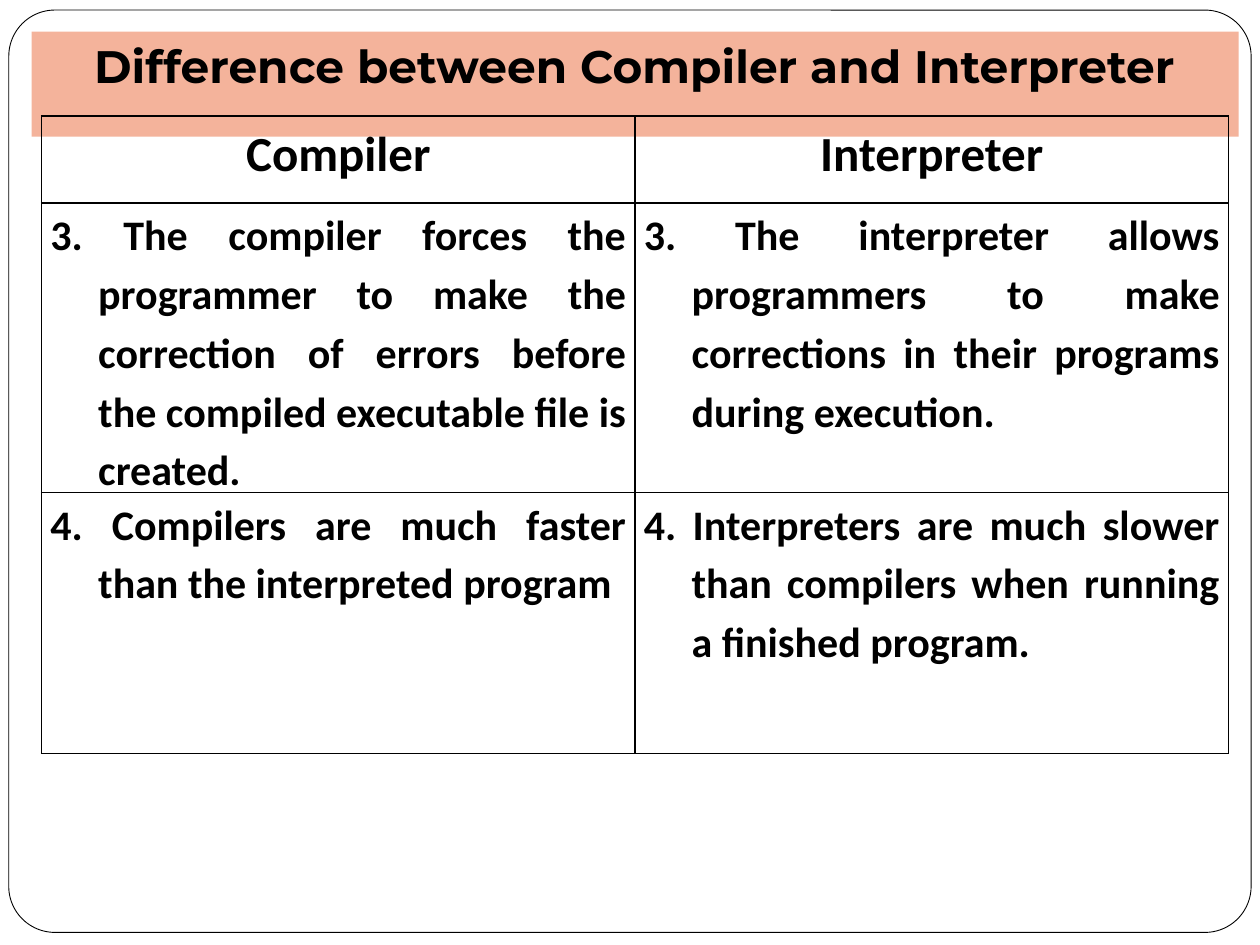
from pptx import Presentation
from pptx.dml.color import RGBColor
from pptx.enum.shapes import MSO_SHAPE
from pptx.enum.text import MSO_ANCHOR, MSO_AUTO_SIZE, PP_ALIGN
from pptx.oxml import parse_xml
from pptx.oxml.ns import nsdecls
from pptx.util import Inches, Pt

COLORS = {"ink": "000000", "paper": "FFFFFF", "banner": "F4B39B"}
TITLE = "Difference between Compiler and Interpreter"
ROWS = [
    ("Compiler", "Interpreter"),
    (
        "3. The compiler forces the programmer to make the correction of errors "
        "before the compiled executable file is created.",
        "3. The interpreter allows programmers to make corrections in their "
        "programs during execution.",
    ),
    (
        "4. Compilers are much faster than the interpreted program",
        "4. Interpreters are much slower than compilers when running "
        "a finished program.",
    ),
]
HEADER_HEIGHT = 0.69
BODY_HEIGHT = 2.07
COLUMN_WIDTH = 4.71


def color(name):
    return RGBColor.from_string(COLORS[name])


def fill_solid(item, name):
    item.fill.solid()
    item.fill.fore_color.rgb = color(name)


def add_span(para, text, font, size):
    span = para.add_run()
    span.text = text
    span.font.name = font
    span.font.size = Pt(size)
    span.font.bold = True
    span.font.color.rgb = color("ink")


def add_frame(page):
    frame = page.shapes.add_shape(
        MSO_SHAPE.ROUNDED_RECTANGLE,
        Inches(0.07), Inches(0.08), Inches(9.86), Inches(7.32),
    )
    frame.adjustments[0] = 0.05
    frame.shadow.inherit = False
    fill_solid(frame, "paper")
    frame.line.color.rgb = color("ink")
    frame.line.width = Pt(0.5)
    page.shapes._spTree.insert(2, frame._element)


def add_title(page):
    title = page.shapes.title
    title.left, title.top = Inches(0.25), Inches(0.25)
    title.width, title.height = Inches(9.58), Inches(0.54)
    fill_solid(title, "banner")
    box = title.text_frame
    box.word_wrap = True
    box.auto_size = MSO_AUTO_SIZE.SHAPE_TO_FIT_TEXT
    box.vertical_anchor = MSO_ANCHOR.TOP
    para = box.paragraphs[0]
    para.alignment = PP_ALIGN.CENTER
    add_span(para, TITLE, "Montserrat", 26)


def add_borders(cell):
    properties = cell._tc.get_or_add_tcPr()
    for position, side in enumerate(("lnL", "lnR", "lnT", "lnB")):
        border = parse_xml(
            f'<a:{side} {nsdecls("a")} w="{Pt(1)}"><a:solidFill>'
            f'<a:srgbClr val="{COLORS["ink"]}"/></a:solidFill></a:{side}>'
        )
        properties.insert(position, border)


def fill_cell(cell, text, is_header):
    cell.margin_left = cell.margin_right = Inches(0.07)
    cell.margin_top = cell.margin_bottom = 0
    cell.fill.background()
    add_borders(cell)
    para = cell.text_frame.paragraphs[0]
    para.line_spacing = 1.15
    para.alignment = PP_ALIGN.CENTER if is_header else PP_ALIGN.JUSTIFY
    if not is_header:
        indent = para._p.get_or_add_pPr()
        indent.set("marL", str(Inches(0.38)))
        indent.set("indent", str(-Inches(0.38)))
    add_span(para, text, "Calibri", 28 if is_header else 24)


def add_comparison(page):
    heights = [HEADER_HEIGHT] + [BODY_HEIGHT] * (len(ROWS) - 1)
    table = page.shapes.add_table(
        len(ROWS), 2, Inches(0.33), Inches(0.92),
        Inches(2 * COLUMN_WIDTH), Inches(sum(heights)),
    ).table
    table.horz_banding = False
    for column in table.columns:
        column.width = Inches(COLUMN_WIDTH)
    for row, height, texts in zip(table.rows, heights, ROWS):
        row.height = Inches(height)
        for cell, text in zip(row.cells, texts):
            fill_cell(cell, text, texts is ROWS[0])


def main():
    deck = Presentation()
    deck.slide_width, deck.slide_height = Inches(10), Inches(7.5)
    page = deck.slides.add_slide(deck.slide_layouts[5])
    add_frame(page)
    add_title(page)
    add_comparison(page)
    deck.save("out.pptx")


if __name__ == "__main__":
    main()
